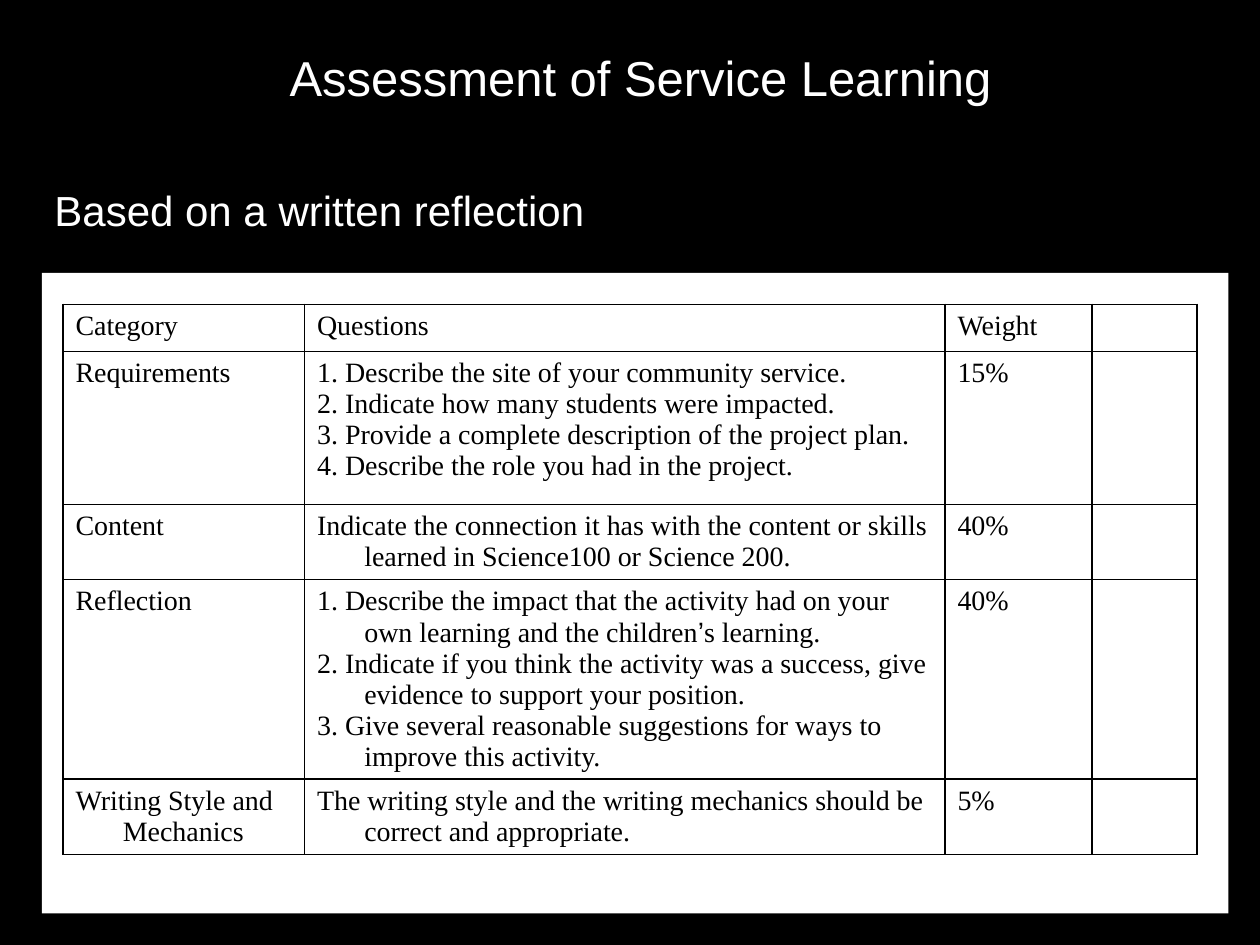
from lxml import etree
from pptx import Presentation
from pptx import util as u
from pptx.dml.color import RGBColor
from pptx.enum import text
from pptx.oxml import ns

Pt = u.Pt
BLACK = RGBColor(0, 0, 0)
WHITE = RGBColor(255, 255, 255)
SANS, SERIF = "Arial", "Times New Roman"

COLUMN_WIDTHS = [138, 366, 84, 60]
ROW_HEIGHTS = [25, 87.5, 43, 113.5, 43]
# Each row holds cells, each cell holds paragraphs
RUBRIC = [
    [["Category"], ["Questions"], ["Weight"], [""]],
    [["Requirements"],
     ["1. Describe the site of your community service.",
      "2. Indicate how many students were impacted.",
      "3. Provide a complete description of the project plan.",
      "4. Describe the role you had in the project."],
     ["15%"], [""]],
    [["Content"],
     ["Indicate the connection it has with the content or skills "
      "learned in Science100 or Science 200."],
     ["40%"], [""]],
    [["Reflection"],
     ["1. Describe the impact that the activity had on your own learning "
      "and the children’s learning.",
      "2. Indicate if you think the activity was a success, give evidence "
      "to support your position.",
      "3. Give several reasonable suggestions for ways to improve this activity."],
     ["40%"], [""]],
    [["Writing Style and Mechanics"],
     ["The writing style and the writing mechanics should be correct "
      "and appropriate."],
     ["5%"], [""]],
]


def add_span(para, words, font, size, color):
    span = para.add_run()
    span.text = words
    span.font.name = font
    span.font.size = Pt(size)
    span.font.color.rgb = color


def place_title(page, left, top, width, height):
    box = page.shapes.title
    box.left, box.top, box.width, box.height = map(Pt, (left, top, width, height))
    box.text_frame.vertical_anchor = text.MSO_ANCHOR.MIDDLE
    para = box.text_frame.paragraphs[0]
    para.alignment = text.PP_ALIGN.CENTER
    add_span(para, "Assessment of Service Learning", SANS, 28, WHITE)


def place_subtitle(page, left, top, width, height):
    box = page.shapes.add_textbox(*map(Pt, (left, top, width, height)))
    box.text_frame.word_wrap = True
    add_span(box.text_frame.paragraphs[0], "Based on a written reflection",
             SANS, 24, WHITE)


def add_borders(cell):
    properties = cell._tc.get_or_add_tcPr()
    for position, side in enumerate(("lnL", "lnR", "lnT", "lnB")):
        line = etree.Element(ns.qn(f"a:{side}"), w=str(Pt(1)))
        fill = etree.SubElement(line, ns.qn("a:solidFill"))
        etree.SubElement(fill, ns.qn("a:srgbClr"), val=str(BLACK))
        properties.insert(position, line)


def fill_cell(cell, lines):
    cell.fill.solid()
    cell.fill.fore_color.rgb = WHITE
    add_borders(cell)
    frame = cell.text_frame
    for index, words in enumerate(lines):
        para = frame.add_paragraph() if index else frame.paragraphs[0]
        # Hanging indent
        indents = para._p.get_or_add_pPr()
        indents.set("marL", str(Pt(27)))
        indents.set("indent", str(Pt(-27)))
        if not words:
            # Keeps an empty cell from stretching its row
            etree.SubElement(para._p, ns.qn("a:endParaRPr"), sz="1600")
            continue
        # The apostrophe is set in the sans font
        before, mark, after = words.partition("’")
        for part, font in ((before, SERIF), (mark, SANS), (after, SERIF)):
            if part:
                add_span(para, part, font, 16, BLACK)


def place_rubric(page, left, top, width, height):
    # White panel
    panel = page.shapes.add_shape(1, *map(Pt, (left, top, width, height)))
    panel.shadow.inherit = False
    panel.fill.solid()
    panel.fill.fore_color.rgb = WHITE
    panel.line.fill.background()

    # Grading table
    table = page.shapes.add_table(
        len(ROW_HEIGHTS), len(COLUMN_WIDTHS), Pt(left + 12), Pt(top + 18),
        Pt(sum(COLUMN_WIDTHS)), Pt(sum(ROW_HEIGHTS))).table
    table.first_row = table.horz_banding = False
    for column, size in zip(table.columns, COLUMN_WIDTHS):
        column.width = Pt(size)
    for row, size, contents in zip(table.rows, ROW_HEIGHTS, RUBRIC):
        row.height = Pt(size)
        for cell, lines in zip(row.cells, contents):
            fill_cell(cell, lines)


def main():
    deck = Presentation()
    deck.slide_width, deck.slide_height = Pt(720), Pt(540)
    page = deck.slides.add_slide(deck.slide_layouts[5])
    page.background.fill.solid()
    page.background.fill.fore_color.rgb = BLACK
    place_title(page, 24, 21.6, 684, 45)
    place_rubric(page, 24, 156, 678, 366)
    place_subtitle(page, 24, 102, 522, 36)
    deck.save("out.pptx")


if __name__ == "__main__":
    main()
